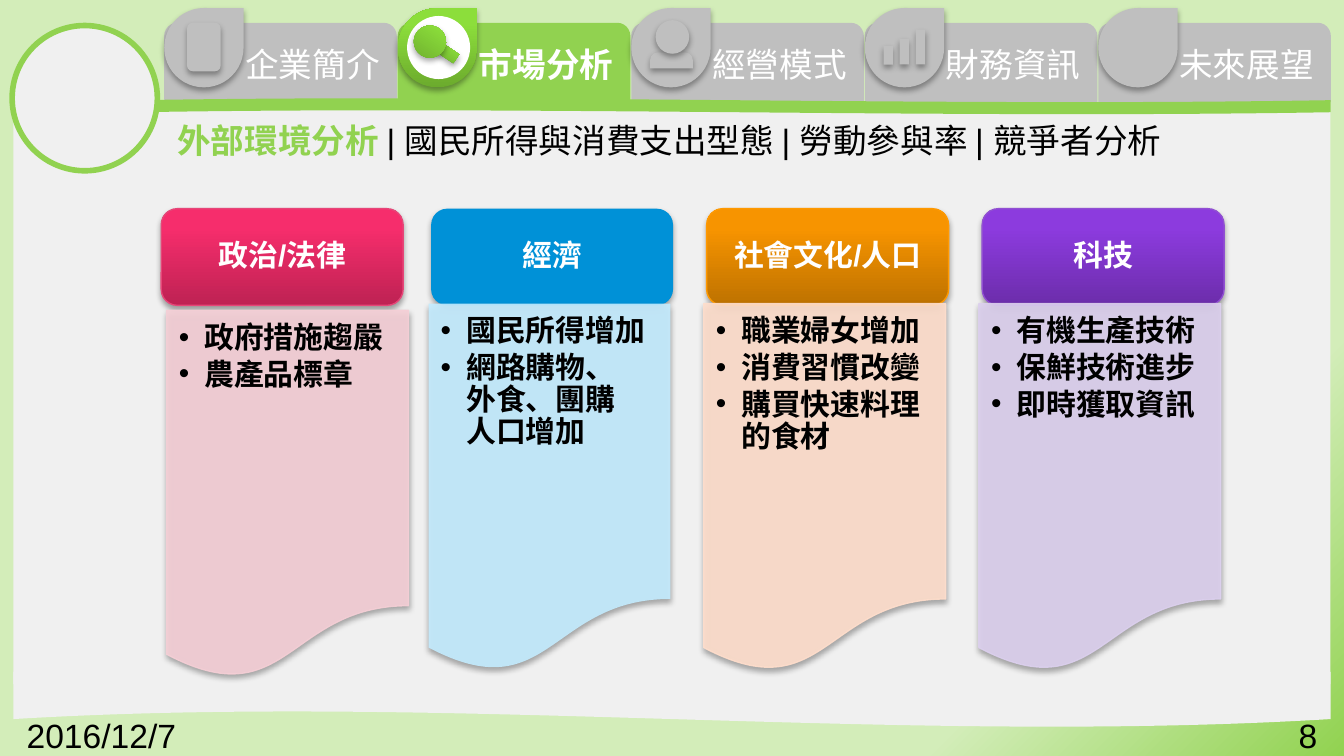
from pptx import Presentation
from pptx.dml.color import RGBColor
from pptx.enum.shapes import MSO_SHAPE
from pptx.enum.text import MSO_ANCHOR, MSO_AUTO_SIZE, PP_ALIGN
from pptx.oxml import parse_xml
from pptx.oxml.ns import nsdecls, qn
from pptx.util import Pt
from lxml import etree

RECT, OVAL, ROUND = MSO_SHAPE.RECTANGLE, MSO_SHAPE.OVAL, MSO_SHAPE.ROUNDED_RECTANGLE
TAB, DROP, WAVE = MSO_SHAPE.ROUND_2_SAME_RECTANGLE, MSO_SHAPE.TEAR, MSO_SHAPE.WAVE
DOCUMENT = MSO_SHAPE.FLOWCHART_DOCUMENT
LEFT, CENTER, RIGHT = PP_ALIGN.LEFT, PP_ALIGN.CENTER, PP_ALIGN.RIGHT
TOP, MIDDLE = MSO_ANCHOR.TOP, MSO_ANCHOR.MIDDLE

THEME = {
    "font": "Arial", "size": 18, "card_size": 16,
    "green": "91D250", "grey": "BFBFBF", "panel": "F0F0F0",
    "white": "FFFFFF", "black": "000000",
    "background": ("D3EDB9", "91D250"), "icon": ("6CAB2D", "8CDE3B"),
}

MAGNIFIER = [(RECT, 20.2, 25.2, 12.2, 5.8, 33.8), (OVAL, 8.6, 13.7, 17.3, 17.3, 33.8)]
PERSON = [(TAB, 10, 28, 23, 8.6, 0), (OVAL, 13, 10.8, 18, 18, 0)]
BUILDING = [(ROUND, 12.2, 12.2, 18, 26, 0)]
BARS = [(RECT, 10.1 + 8.64 * i, 34.6 - height, 5, height, 0)
        for i, height in enumerate((10, 13.7, 18.7))]
TABS = [("企業簡介", BUILDING), ("市場分析", MAGNIFIER), ("經營模式", PERSON),
        ("財務資訊", BARS), ("未來展望", [])]
ACTIVE_TAB = "市場分析"
TOPICS = ["外部環境分析", "國民所得與消費支出型態", "勞動參與率", "競爭者分析"]
DATE, PAGE = "2016/12/7", "8"

CARDS = [
    {"heading": "政治/法律", "points": ["政府措施趨嚴", "農產品標章"],
     "header": ("BE2253", "F62D6C"), "edge": "E64678", "sheet": "F5CFD6",
     "header_at": (86.4, 111.8), "sheet_at": (89.3, 166.3)},
    {"heading": "經濟", "points": ["國民所得增加", "網路購物、\v外食、團購\v人口增加"],
     "header": "0091D7", "edge": None, "sheet": "C4ECFF",
     "header_at": (231, 111.8), "sheet_at": (229.6, 162.7)},
    {"heading": "社會文化/人口", "points": ["職業婦女增加", "消費習慣改變", "購買快速料理的食材"],
     "header": ("BE7200", "F79400"), "edge": "FF9900", "sheet": "FFDECC",
     "header_at": (378.6, 111.8), "sheet_at": (377, 162.7)},
    {"heading": "科技", "points": ["有機生產技術", "保鮮技術進步", "即時獲取資訊"],
     "header": ("6C2DAB", "8C3BDE"), "edge": "9150D2", "sheet": "DCD0EE",
     "header_at": (526.2, 111.8), "sheet_at": (524.4, 162.7)},
]
CARD_WIDTH, HEADER_HEIGHT, SHEET_HEIGHT, LIST_HEIGHT = 129.6, 51.8, 197.3, 158.4
TAB_LEFT, TAB_PITCH, TAB_TOP, TAB_HEIGHT = 88, 125.1, 12.2, 42.5
DROP_TOP, DROP_SIZE = 4.3, 42.5


def rgb(code):
    return RGBColor.from_string(code)


def blend(fill, colors, angle, positions=(0, 0.8)):
    fill.gradient()
    fill.gradient_angle = angle
    for stop, color, position in zip(fill.gradient_stops, colors, positions):
        stop.color.rgb = rgb(color)
        stop.position = position


def draw(kind, left, top, width, height, fill, shadow=False, edge=None, weight=0.75, opacity=100):
    shape = slide.shapes.add_shape(kind, Pt(left), Pt(top), Pt(width), Pt(height))
    shape.shadow.inherit = False
    if isinstance(fill, tuple):
        blend(shape.fill, fill, 90)
    else:
        shape.fill.solid()
        shape.fill.fore_color.rgb = rgb(fill)
    if edge:
        shape.line.color.rgb = rgb(edge)
        shape.line.width = Pt(weight)
    else:
        shape.line.fill.background()
    if opacity < 100:
        for color in shape._element.spPr.iter(qn("a:srgbClr")):
            etree.SubElement(color, qn("a:alpha")).set("val", str(opacity * 1000))
    if shadow:
        shape._element.spPr.find(qn("a:effectLst")).append(parse_xml(
            f'<a:outerShdw {nsdecls("a")} blurRad="40000" dist="23000" dir="5400000" '
            'rotWithShape="0"><a:srgbClr val="000000"><a:alpha val="35000"/>'
            '</a:srgbClr></a:outerShdw>'))
    return shape


def style(paragraph, align, size, color=None, bold=None):
    paragraph.alignment = align
    font = paragraph.font
    font.name, font.size, font.bold = THEME["font"], Pt(size), bold
    if color:
        font.color.rgb = rgb(color)


def set_frame(frame, anchor, insets):
    frame.word_wrap = True
    frame.auto_size = MSO_AUTO_SIZE.NONE
    frame.vertical_anchor = anchor
    (frame.margin_left, frame.margin_top,
     frame.margin_right, frame.margin_bottom) = map(Pt, insets)


def place(holder, left, top, width, height):
    holder.left, holder.top, holder.width, holder.height = map(Pt, (left, top, width, height))
    slide.shapes._spTree.append(holder._element)


def add_tab(index):
    label, icon = TABS[index]
    active = label == ACTIVE_TAB
    left = TAB_LEFT + TAB_PITCH * index
    icon_fill = THEME["icon"] if active else THEME["grey"]
    tab = draw(TAB, left, TAB_TOP, 124.6, TAB_HEIGHT, THEME["green" if active else "grey"])
    tab.text_frame.text = label
    style(tab.text_frame.paragraphs[0], RIGHT, THEME["size"], THEME["white"], active)
    draw(DROP, left, DROP_TOP, DROP_SIZE, DROP_SIZE, icon_fill, shadow=True)
    if active:
        draw(OVAL, left + 5, 8.6, 33.8, 33.8, THEME["white"])
    for kind, dx, top, width, height, turn in icon:
        part = draw(kind, left + dx, top, width, height, icon_fill, shadow=True)
        part.rotation = turn
        if kind == TAB:
            part.adjustments[0] = 0.5


def add_card(card, body):
    header = draw(ROUND, *card["header_at"], CARD_WIDTH, HEADER_HEIGHT, card["header"],
                  shadow=True, edge=card["edge"])
    set_frame(header.text_frame, MIDDLE, (8.6, 5, 8.6, 5))
    header.text_frame.text = card["heading"]
    heading = header.text_frame.paragraphs[0]
    heading.line_spacing = 0.9
    style(heading, CENTER, THEME["card_size"], THEME["white"], True)

    draw(DOCUMENT, *card["sheet_at"], CARD_WIDTH, SHEET_HEIGHT, card["sheet"], shadow=True,
         edge=card["edge"] and card["sheet"], opacity=90)
    place(body, *card["sheet_at"], CARD_WIDTH, LIST_HEIGHT)
    set_frame(body.text_frame, TOP, (6.5, 6.5, 8.6, 10))
    body.text_frame.text = "\n".join(card["points"])
    for point in body.text_frame.paragraphs:
        point.line_spacing, point.space_before, point.space_after = 0.9, Pt(0), Pt(2.4)
        properties = point._p.get_or_add_pPr()
        properties.set("marL", str(Pt(13.7)))
        properties.set("indent", str(-Pt(13.7)))
        etree.SubElement(properties, qn("a:buFont")).set("typeface", THEME["font"])
        etree.SubElement(properties, qn("a:buChar")).set("char", "•")
        style(point, LEFT, THEME["card_size"], THEME["black"], True)


def add_topics(title):
    place(title, 87.8, 60.5, 632.2, 28.8)
    set_frame(title.text_frame, MIDDLE, (7.2, 3.6, 7.2, 3.6))
    line = title.text_frame.paragraphs[0]
    style(line, LEFT, THEME["size"])
    current, *others = TOPICS
    for text, color, bold in ((current + " ", "green", True),
                              ("| " + " | ".join(others), "black", False)):
        run = line.add_run()
        run.text = text
        run.font.bold = bold
        run.font.color.rgb = rgb(THEME[color])


deck = Presentation()
deck.slide_width, deck.slide_height = Pt(720), Pt(405)
slide = deck.slides.add_slide(deck.slide_layouts[4])
blend(slide.background.fill, THEME["background"], 315, (0.8, 1))
title, *bodies = slide.placeholders

for index in range(len(TABS)):
    add_tab(index)
draw(RECT, 7.2, 54.7, 705.6, 311.8, THEME["panel"])
draw(WAVE, 7.2, 355.7, 705.6, 33.8, THEME["panel"])
draw(WAVE, 74.2, 52.6, 638.6, 8.6, THEME["green"])
draw(OVAL, 6.5, 13.7, 77.8, 77.8, THEME["panel"], edge=THEME["green"], weight=3)

for text, left, align in ((DATE, 7.2, LEFT), (PAGE, 545, RIGHT)):
    footer = slide.shapes.add_textbox(Pt(left), Pt(379.4), Pt(167.8), Pt(21.6)).text_frame
    footer.word_wrap = True
    footer.text = text
    style(footer.paragraphs[0], align, THEME["size"], THEME["black"])

add_topics(title)
for card, body in zip(CARDS, bodies):
    add_card(card, body)

deck.save("out.pptx")
